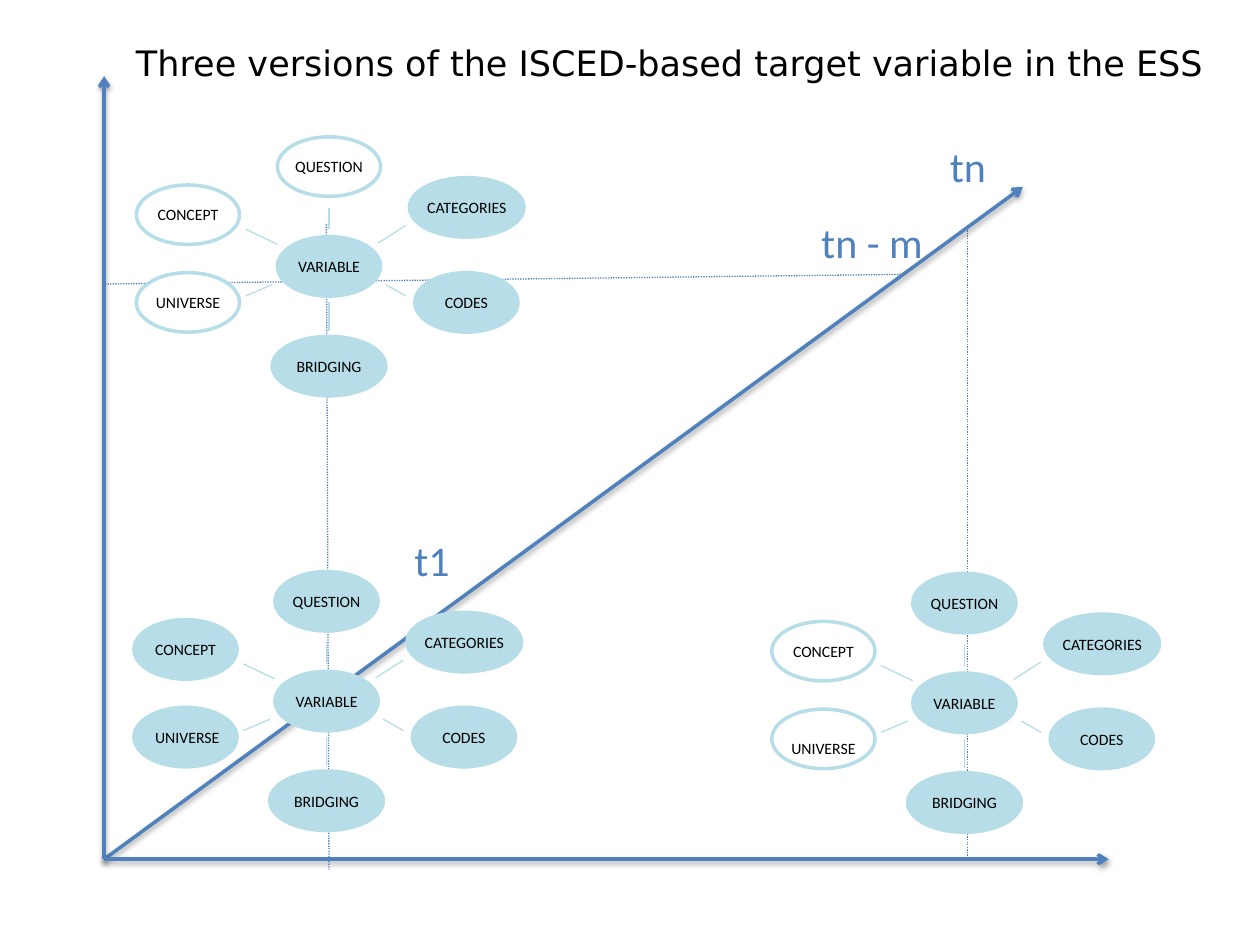
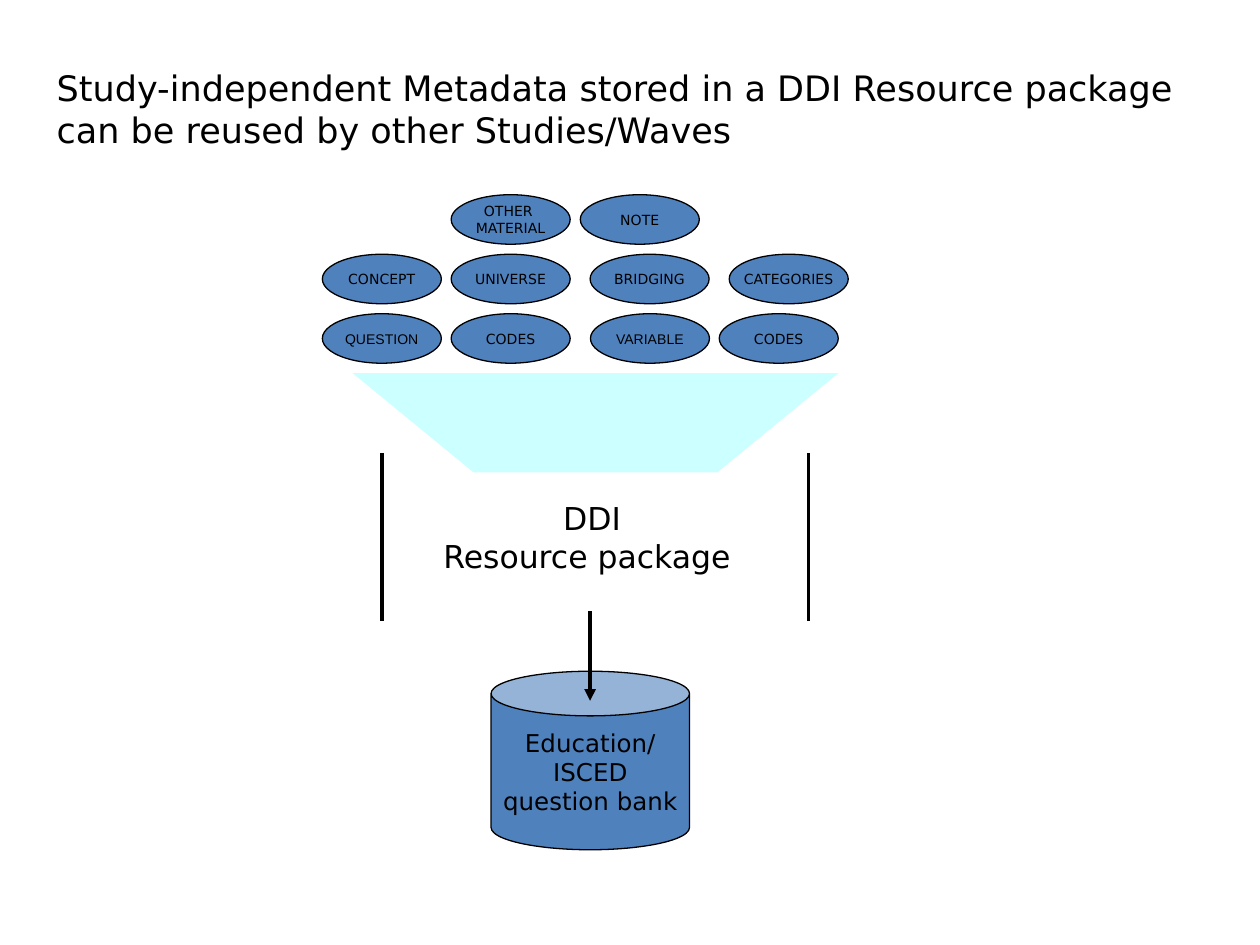
"""Build two slides on ISCED variable versions and the DDI resource package."""
from pptx import Presentation
from pptx.dml.color import RGBColor
from pptx.enum.dml import MSO_LINE
from pptx.enum.shapes import MSO_CONNECTOR, MSO_SHAPE
from pptx.enum.text import MSO_ANCHOR, MSO_AUTO_SIZE, PP_ALIGN
from pptx.oxml import parse_xml
from pptx.oxml.ns import nsdecls
from pptx.util import Pt

COLORS = {"blue": "4F81BD", "dotted": "4B7EBC", "pale": "B7DEE8",
          "white": "FFFFFF", "black": "000000", "funnel": "CCFFFF"}
RGB = {name: RGBColor.from_string(value) for name, value in COLORS.items()}
SANS = "DejaVu Sans"
SHADOW = ('<a:outerShdw blurRad="39370" dist="20320" dir="5400000" rotWithShape="0">'
          '<a:srgbClr val="000000"><a:alpha val="38000"/></a:srgbClr></a:outerShdw>')


def add_line(shapes, ends, color, width, dash=None, head=None, shadow=""):
    c = shapes.add_connector(MSO_CONNECTOR.STRAIGHT, *[Pt(v) for v in ends])
    c.line.color.rgb = RGB[color]
    c.line.width = Pt(width)
    if dash:
        c.line.dash_style = dash
    if head:
        c.line._get_or_add_ln().append(
            parse_xml(f'<a:tailEnd {nsdecls("a")} type="{head}"/>'))
    c._element.spPr.append(
        parse_xml(f'<a:effectLst {nsdecls("a")}>{shadow}</a:effectLst>'))


def write(tf, lines, size, font=SANS, color="black", align=PP_ALIGN.CENTER):
    tf.word_wrap = False
    for i, text in enumerate(lines):
        p = tf.add_paragraph() if i else tf.paragraphs[0]
        p.alignment = align
        r = p.add_run()
        r.text = text
        r.font.size = Pt(size)
        r.font.name = font
        r.font.color.rgb = RGB[color]


prs = Presentation()
prs.slide_width, prs.slide_height = Pt(720), Pt(540)
titles = [
    ((70.5, 20.2, 638, 31.5),
     ["Three versions of the ISCED-based target variable in the ESS"]),
    ((25.2, 34.6, 661, 55.5),
     ["Study-independent Metadata stored in a DDI Resource package",
      "can be reused by other Studies/Waves"]),
]
for box, lines in titles:
    s = prs.slides.add_slide(prs.slide_layouts[5])
    sp = s.shapes.title
    sp.left, sp.top, sp.width, sp.height = [Pt(v) for v in box]
    tf = sp.text_frame
    tf.vertical_anchor = MSO_ANCHOR.TOP
    tf.auto_size = MSO_AUTO_SIZE.SHAPE_TO_FIT_TEXT
    write(tf, lines, 20, align=PP_ALIGN.LEFT)
versions, package = prs.slides

s = versions
for ends in [(186.5, 128, 188, 497), (60, 162.3, 515, 156.8), (552.8, 490.5, 552.8, 128)]:
    add_line(s.shapes, ends, "dotted", 0.75, dash=MSO_LINE.ROUND_DOT)
for tip in [(584.5, 106.8), (59.5, 43.5), (633.5, 491)]:
    add_line(s.shapes, (59.5, 491, *tip), "blue", 2, head="arrow", shadow=SHADOW)

nodes = [("VARIABLE", 0, 0, 59), ("CONCEPT", -80.6, -29.5, 59),
         ("CATEGORIES", 78.7, -33.7, 65.5), ("CODES", 78.5, 20.6, 59),
         ("QUESTION", 0, -57, 59), ("UNIVERSE", -80.6, 20.6, 59),
         ("BRIDGING", 0, 57, 65)]
spokes = [(-47.5, -21.2, -29.5, -12.6), (-47.5, 16.9, -32.4, 10.4),
          (0, 37, 0, 20.5), (0, -33.5, 0, -21.2),
          (43.9, -23.4, 28.1, -13.3), (43.9, 16.9, 32.4, 10.4)]
node_height = 34
clusters = [
    (186.6, 400.6, [], (2, 0)),
    (188, 152.2, ["CONCEPT", "QUESTION", "UNIVERSE"], (0, 0)),
    (551.1, 401.6, ["CONCEPT", "UNIVERSE"], (0, 11)),
]
for cx, cy, hollow, universe_inset in clusters:
    grp = s.shapes.add_group_shape()
    for name, dx, dy, width in nodes:
        sp = grp.shapes.add_shape(
            MSO_SHAPE.OVAL, Pt(cx + dx - width / 2), Pt(cy + dy - node_height / 2),
            Pt(width), Pt(node_height))
        sp.shadow.inherit = False
        sp.fill.solid()
        sp.fill.fore_color.rgb = RGB["white" if name in hollow else "pale"]
        sp.line.color.rgb = RGB["pale"]
        sp.line.width = Pt(2)
        tf = sp.text_frame
        left, top = universe_inset if name == "UNIVERSE" else (0, 0)
        tf.margin_left, tf.margin_top = Pt(left), Pt(top)
        tf.margin_right = tf.margin_bottom = 0
        tf.vertical_anchor = MSO_ANCHOR.MIDDLE
        write(tf, [name], 9, "Calibri")
    for x1, y1, x2, y2 in spokes:
        add_line(grp.shapes, (cx + x1, cy + y1, cx + x2, cy + y2), "pale", 0.75)

labels = [
    (versions, (535.7, 77, 35.3, 36.7), ["tn"], 24, "Calibri", "blue", PP_ALIGN.LEFT),
    (versions, (229.7, 301.7, 34.6, 36.7), ["t1"], 24, "Calibri", "blue", PP_ALIGN.LEFT),
    (versions, (462.2, 120.2, 72.7, 36.7), ["tn - m"], 24, "Calibri", "blue", PP_ALIGN.LEFT),
    (package, (246.2, 281.5, 184.3, 50.4), ["DDI", "Resource package "], 18, SANS,
     "black", PP_ALIGN.CENTER),
]
for s, box, lines, size, font, color, align in labels:
    tf = s.shapes.add_textbox(*[Pt(v) for v in box]).text_frame
    tf.auto_size = MSO_AUTO_SIZE.SHAPE_TO_FIT_TEXT
    write(tf, lines, size, font, color, align)

s = package
rows = [
    [(257.8, ["OTHER ", "MATERIAL"], SANS), (331.6, ["NOTE"], SANS)],
    [(184.2, ["CONCEPT"], SANS), (257.8, ["UNIVERSE"], SANS),
     (337.2, ["BRIDGING"], SANS), (416.7, ["CATEGORIES"], SANS)],
    [(184.2, ["QUESTION"], "Arial"), (257.8, ["CODES"], SANS),
     (337.4, ["VARIABLE"], "Arial"), (411, ["CODES"], SANS)],
]
items = [(MSO_SHAPE.OVAL, (x, 111.3 + 34 * i, 68, 28.3), lines, 8, font)
         for i, row in enumerate(rows) for x, lines, font in row]
items.append((MSO_SHAPE.CAN, (280.6, 383.6, 113.4, 102),
              ["Education/", "ISCED", "question bank"], 14, SANS))
for kind, box, lines, size, font in items:
    sp = s.shapes.add_shape(kind, *[Pt(v) for v in box])
    sp.shadow.inherit = False
    sp.fill.solid()
    sp.fill.fore_color.rgb = RGB["blue"]
    sp.line.color.rgb = RGB["black"]
    sp.line.width = Pt(0.75)
    sp.text_frame.vertical_anchor = MSO_ANCHOR.MIDDLE
    write(sp.text_frame, lines, size, font)

funnel = s.shapes.build_freeform(Pt(201.6), Pt(213.3))
funnel.add_line_segments([(Pt(x), Pt(y)) for x, y in
                          [(270.7, 270), (409.9, 270), (479, 213.3)]])
sp = funnel.convert_to_shape()
sp.shadow.inherit = False
sp.fill.solid()
sp.fill.fore_color.rgb = RGB["funnel"]
sp.line.fill.background()

for x in (218.2, 462):
    add_line(s.shapes, (x, 258.8, x, 355), "black", 2.25)
add_line(s.shapes, (337.2, 349.3, 337.2, 400.5), "black", 2.25, head="triangle")

prs.save("out.pptx")
